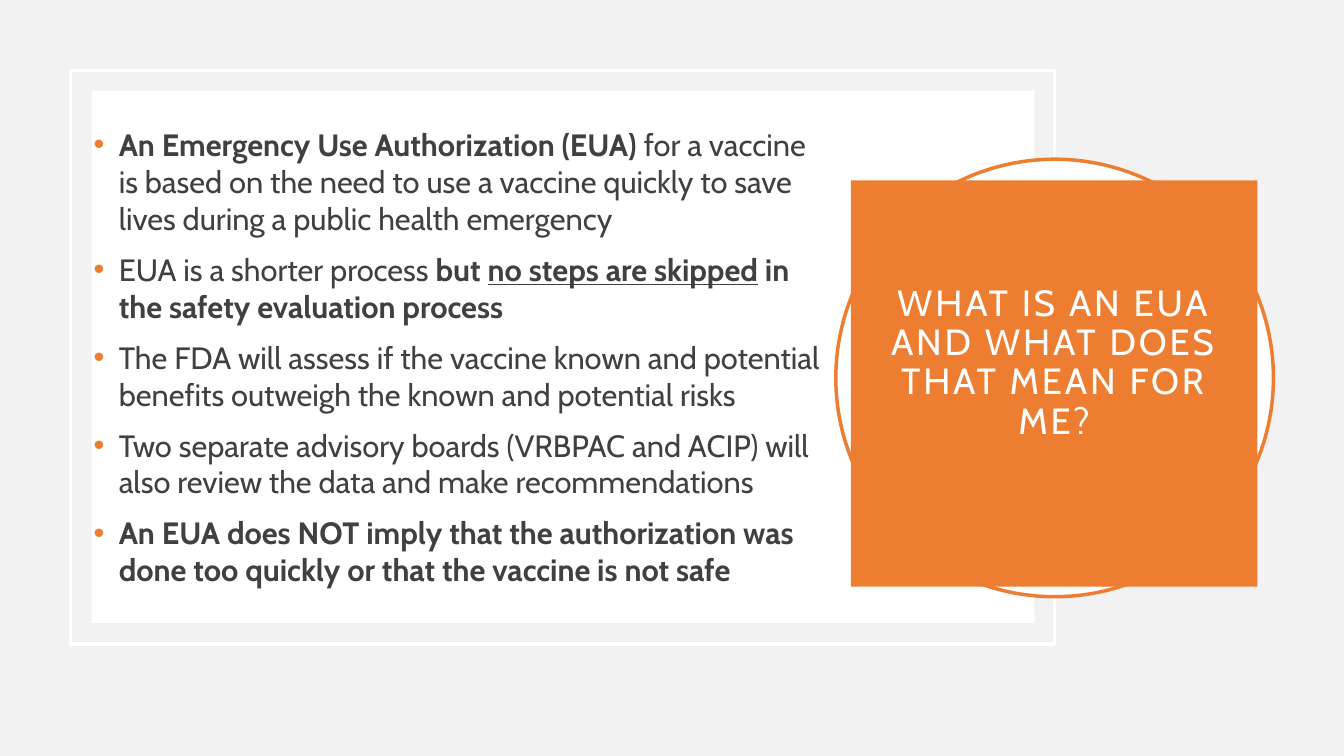
from lxml.etree import SubElement
from pptx import Presentation
from pptx.dml.color import RGBColor
from pptx.enum.shapes import MSO_SHAPE
from pptx.enum.text import MSO_ANCHOR, MSO_AUTO_SIZE, PP_ALIGN
from pptx.oxml.ns import qn
from pptx.util import Inches, Pt

WHITE, ORANGE, GRAY, PALE = "FFFFFF", "ED7D31", "404040", "F2F2F2"
BOLD = {"bold": True}
LINED = {"bold": True, "underline": True}
TITLE = "WHAT IS AN EUA AND WHAT DOES THAT MEAN FOR ME?"
POINTS = [
    [("An Emergency Use Authorization (EUA) ", BOLD),
     ("for a vaccine is based on the need to use a vaccine quickly to save "
      "lives during a public health emergency", {})],
    [("EUA is a shorter process ", {}), ("but ", BOLD),
     ("no steps are skipped", LINED),
     (" in the safety evaluation process", BOLD)],
    [("The FDA will assess if the vaccine known and potential benefits "
      "outweigh the known and potential risks", {})],
    [("Two separate advisory boards (VRBPAC and ACIP) will also review the "
      "data and make recommendations", {})],
    [("An EUA does NOT imply that the authorization was done too quickly "
      "or that the vaccine is not safe", BOLD)],
]


def color(code):
    """Turn a hex string into a colour."""
    return RGBColor.from_string(code)


def apply(item, values):
    """Set each format value on an item."""
    for name, value in values.items():
        setattr(item, name, value)


class Deck:
    """Holds the style and the current slide."""

    font = "Cabin"
    line = Pt(2.5)

    def __init__(self):
        """Start a wide slide with a title."""
        self.show = Presentation()
        apply(self.show, {"slide_width": Inches(13.33),
                          "slide_height": Inches(7.5)})
        self.slide = self.show.slides.add_slide(self.show.slide_layouts[5])
        self.paint(self.slide.background.fill, PALE)

    def paint(self, fill, code):
        """Fill with one colour, or with none."""
        if code:
            fill.solid()
            fill.fore_color.rgb = color(code)
        else:
            fill.background()

    def shape(self, kind, box, fill=None, line=None):
        """Add a preset shape."""
        item = self.slide.shapes.add_shape(kind, *map(Inches, box))
        item.shadow.inherit = False
        self.paint(item.fill, fill)
        self.paint(item.line.fill, line)
        if line:
            item.line.width = self.line

    def text(self, para, words, size, code, **style):
        """Add a run of text."""
        run = para.add_run()
        run.text = words
        apply(run.font, {"name": self.font, "size": Pt(size), **style})
        run.font.color.rgb = color(code)
        return run

    def bullet(self, para):
        """Give a paragraph a hanging orange bullet."""
        props = para._p.get_or_add_pPr()
        props.set("marL", str(Inches(0.25)))
        props.set("indent", str(-Inches(0.25)))
        tint = SubElement(props, qn("a:buClr"))
        SubElement(tint, qn("a:srgbClr"), val=ORANGE)
        SubElement(props, qn("a:buFont"), typeface="Arial")
        SubElement(props, qn("a:buChar"), char="•")

    def list(self, box, points):
        """Add a bulleted list."""
        frame = self.slide.shapes.add_textbox(*map(Inches, box)).text_frame
        apply(frame, {"word_wrap": True,
                      "vertical_anchor": MSO_ANCHOR.MIDDLE})
        for spot, point in enumerate(points):
            para = frame.add_paragraph() if spot else frame.paragraphs[0]
            para.space_before = Pt(10)
            self.bullet(para)
            for words, style in point:
                self.text(para, words, 22, GRAY, **style)

    def title(self, box, words):
        """Place the title on top of the other shapes."""
        item = self.slide.shapes.title
        sides = ("left", "top", "width", "height")
        apply(item, dict(zip(sides, map(Inches, box))))
        self.paint(item.fill, ORANGE)
        pad = Inches(0.2)
        frame = item.text_frame
        apply(frame, {"word_wrap": True, "auto_size": MSO_AUTO_SIZE.NONE,
                      "vertical_anchor": MSO_ANCHOR.MIDDLE,
                      "margin_left": pad, "margin_right": pad,
                      "margin_top": pad, "margin_bottom": Inches(0.6)})
        para = frame.paragraphs[0]
        apply(para, {"alignment": PP_ALIGN.CENTER, "line_spacing": 0.9})
        run = self.text(para, words, 26, WHITE)
        run._r.get_or_add_rPr().set("spc", "200")
        item.element.getparent().append(item.element)


def main():
    """Build and save the slide."""
    deck = Deck()
    deck.shape(MSO_SHAPE.RECTANGLE, (0.7, 0.7, 9.76, 5.69), line=WHITE)
    deck.shape(MSO_SHAPE.RECTANGLE, (0.91, 0.9, 9.35, 5.28), WHITE)
    deck.list((0.83, 1.4, 7.46, 4.28), POINTS)
    deck.shape(MSO_SHAPE.OVAL, (8.29, 1.58, 4.34, 4.34), WHITE, ORANGE)
    deck.title((8.44, 1.79, 4.03, 4.03), TITLE)
    deck.show.save("out.pptx")


if __name__ == "__main__":
    main()
